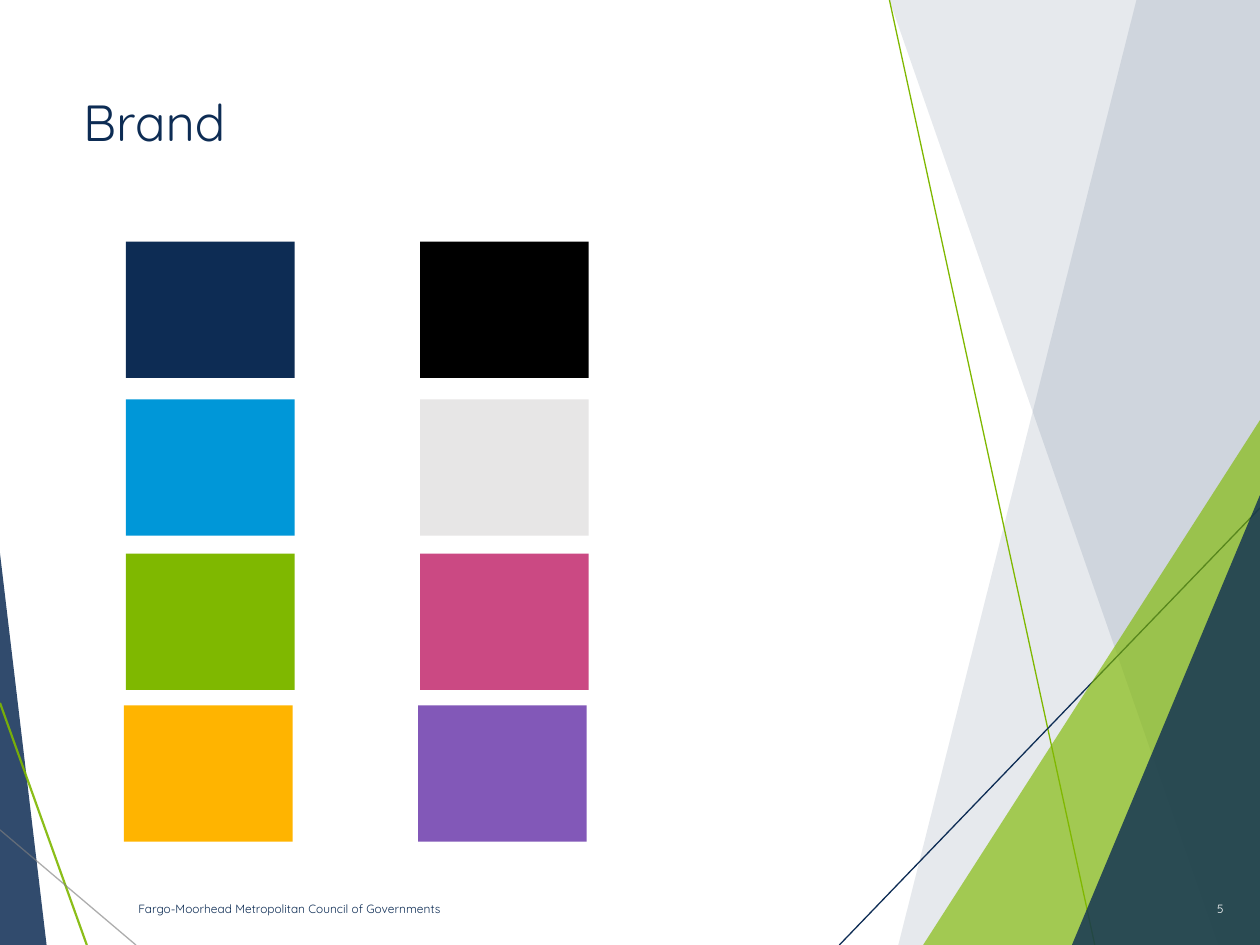
import pptx
import pptx.util
import pptx.dml.color
import pptx.enum.shapes
import pptx.enum.text
import pptx.oxml.ns
from lxml import etree

Cm = pptx.util.Cm
RGB = pptx.dml.color.RGBColor
MSO = pptx.enum.shapes.MSO_SHAPE
ALIGN = pptx.enum.text.PP_ALIGN
ANCHOR = pptx.enum.text.MSO_ANCHOR
qn = pptx.oxml.ns.qn

NAVY = RGB(0x0D, 0x2C, 0x54)
BLUE = RGB(0x00, 0x97, 0xD8)
GREEN = RGB(0x7F, 0xB8, 0x00)
AMBER = RGB(0xFF, 0xB4, 0x00)
BLACK = RGB(0x00, 0x00, 0x00)
SILVER = RGB(0xE7, 0xE6, 0xE6)
PINK = RGB(0xCB, 0x49, 0x83)
PURPLE = RGB(0x82, 0x58, 0xB8)
GRAY = RGB(0x80, 0x80, 0x80)
WHITE = RGB(0xFF, 0xFF, 0xFF)
FONT = "Quicksand"
W, H = 25.4, 19.05

# Content, lengths in centimetres
TITLE = "Brand"
FOOTER = "Fargo-Moorhead Metropolitan Council of Governments"
PAGE = "5"
PALETTE = [(NAVY, BLACK), (BLUE, SILVER), (GREEN, PINK), (AMBER, PURPLE)]
COLUMNS = [2.54, 8.47]
ROWS = [(4.87, 0), (8.05, 0), (11.16, 0), (14.22, -0.04)]  # top, side shift
SWATCH_W, SWATCH_H = 3.4, 2.75

# Backdrop: triangles stand on the bottom edge, (left, top, width, apex)
LEFT_WEDGE = (0, 11.15, 0.94, 0)
GREEN_WEDGE = (18.61, 8.47, 6.79, 1)
NAVY_WEDGE = (21.61, 9.98, 3.79, 1)
PALE_BANDS = [
    [(17.93, 0), (W, 0), (W, H), (24.56, H)],
    [(22.91, 0), (W, 0), (W, H), (18.11, H)],
]
RIGHT_LINES = [
    ((17.93, 0), (22.07, H), GREEN, 0.75, 100),
    ((W, 10.24), (16.92, H), NAVY, 0.75, 100),
]
LEFT_LINES = [
    ((0, 14.17), (1.75, H), GREEN, 1.25, 90),
    ((0, 16.73), (2.74, H), GRAY, 0.75, 63),
]


def set_alpha(parent, percent):
    if percent < 100:
        color = next(parent.iter(qn("a:srgbClr")))
        etree.SubElement(color, qn("a:alpha")).set("val", str(percent * 1000))


def paint(sp, color, alpha=100):
    sp.shadow.inherit = False
    sp.fill.solid()
    sp.fill.fore_color.rgb = color
    set_alpha(sp._element.spPr, alpha)
    sp.line.fill.background()


def add_wedge(s, wedge, color, alpha):
    x, y, w, apex = wedge
    sp = s.shapes.add_shape(MSO.ISOSCELES_TRIANGLE,
                            Cm(x), Cm(y), Cm(w), Cm(H - y))
    sp.adjustments[0] = apex
    paint(sp, color, alpha)


def add_band(s, points):
    corners = [(Cm(x), Cm(y)) for x, y in points]
    fb = s.shapes.build_freeform(*corners[0])
    fb.add_line_segments(corners[1:], close=True)
    paint(fb.convert_to_shape(), NAVY, 10)


def add_line(s, start, end, color, width, alpha):
    ln = s.shapes.add_connector(pptx.enum.shapes.MSO_CONNECTOR.STRAIGHT,
                                *map(Cm, start + end))
    ln.line.color.rgb = color
    ln.line.width = pptx.util.Pt(width)
    spPr = ln._element.spPr
    set_alpha(spPr, alpha)
    etree.SubElement(spPr, qn("a:effectLst"))


def put_text(sp, text, size, color, align=ALIGN.LEFT, anchor=ANCHOR.MIDDLE):
    tf = sp.text_frame
    tf.word_wrap = True
    tf.auto_size = pptx.enum.text.MSO_AUTO_SIZE.NONE
    tf.vertical_anchor = anchor
    p = tf.paragraphs[0]
    p.alignment = align
    r = p.add_run()
    r.text = text
    r.font.name = FONT
    r.font.size = pptx.util.Pt(size)
    r.font.color.rgb = color


def main():
    prs = pptx.Presentation()
    prs.slide_width, prs.slide_height = Cm(W), Cm(H)
    s = prs.slides.add_slide(prs.slide_layouts[5])

    # Backdrop, from back to front
    add_wedge(s, LEFT_WEDGE, NAVY, 85)
    for points in PALE_BANDS:
        add_band(s, points)
    for line in RIGHT_LINES:
        add_line(s, *line)
    add_wedge(s, GREEN_WEDGE, GREEN, 65)
    add_wedge(s, NAVY_WEDGE, NAVY, 80)
    for line in LEFT_LINES:
        add_line(s, *line)

    # Title
    title = s.shapes.title
    title.left, title.top = Cm(1.42), Cm(1.7)
    title.width, title.height = Cm(17.91), Cm(3.66)
    put_text(title, TITLE, 29, NAVY, anchor=ANCHOR.TOP)

    # Footer and page number
    for text, x, w, color, align in [
        (FOOTER, 2.54, 14.6, NAVY, ALIGN.LEFT),
        (PAGE, 24.13, 0.79, WHITE, ALIGN.RIGHT),
    ]:
        box = s.shapes.add_textbox(Cm(x), Cm(17.81), Cm(w), Cm(1.02))
        put_text(box, text, 6.8, color, align)

    # Colour swatches
    for (y, shift), colors in zip(ROWS, PALETTE):
        for x, color in zip(COLUMNS, colors):
            sp = s.shapes.add_shape(MSO.RECTANGLE, Cm(x + shift), Cm(y),
                                    Cm(SWATCH_W), Cm(SWATCH_H))
            paint(sp, color)

    prs.save("out.pptx")


if __name__ == "__main__":
    main()
